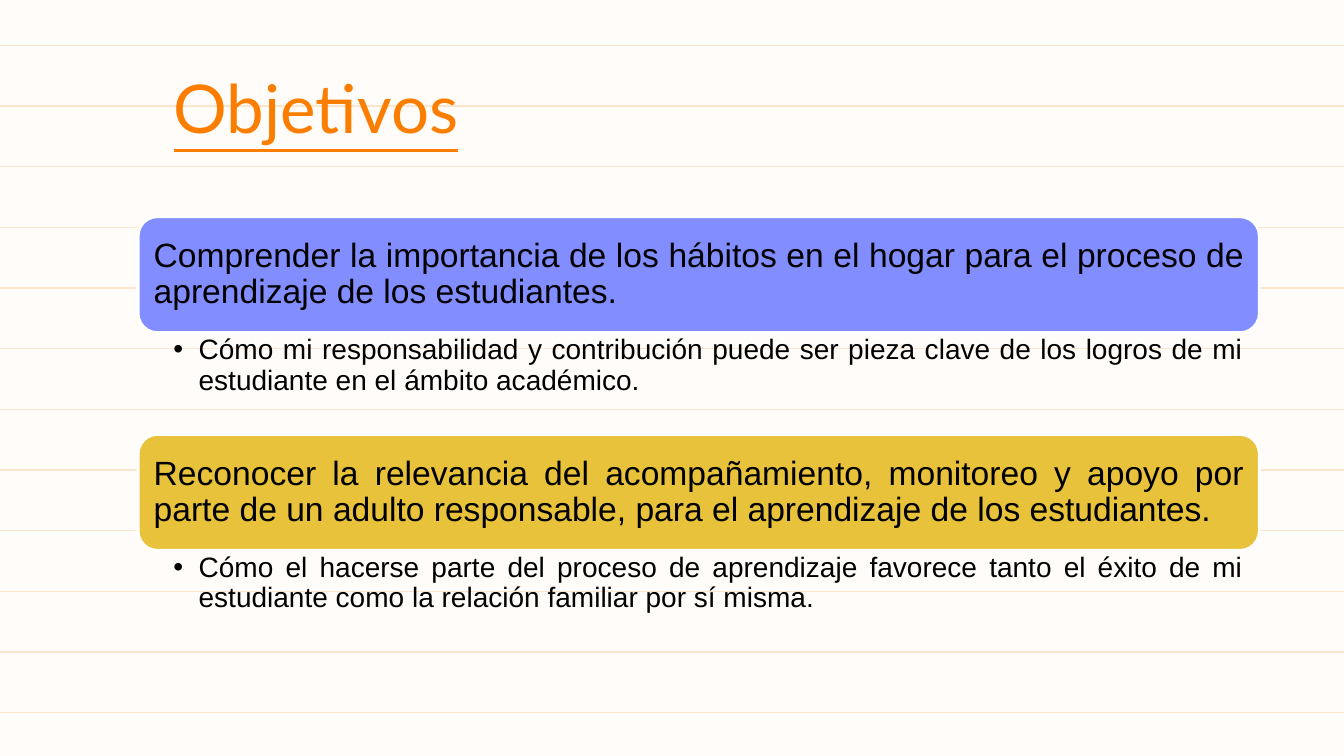
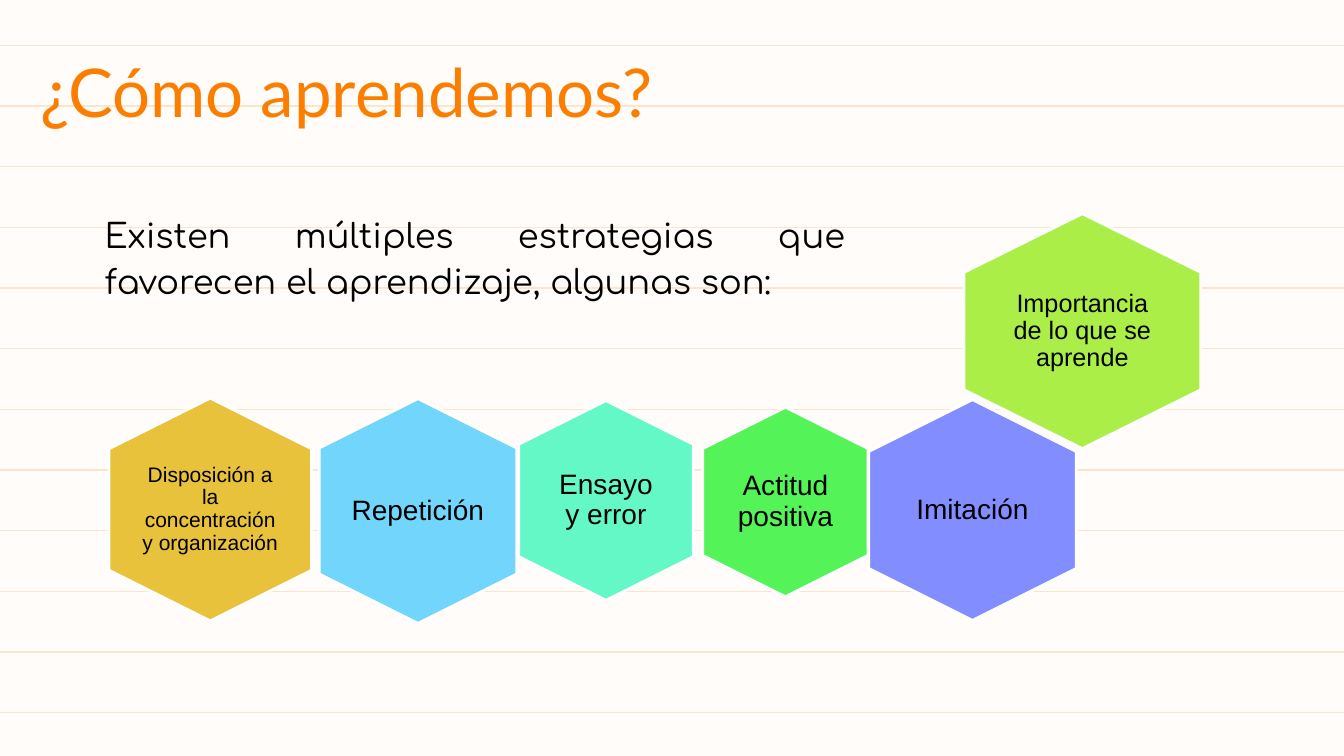
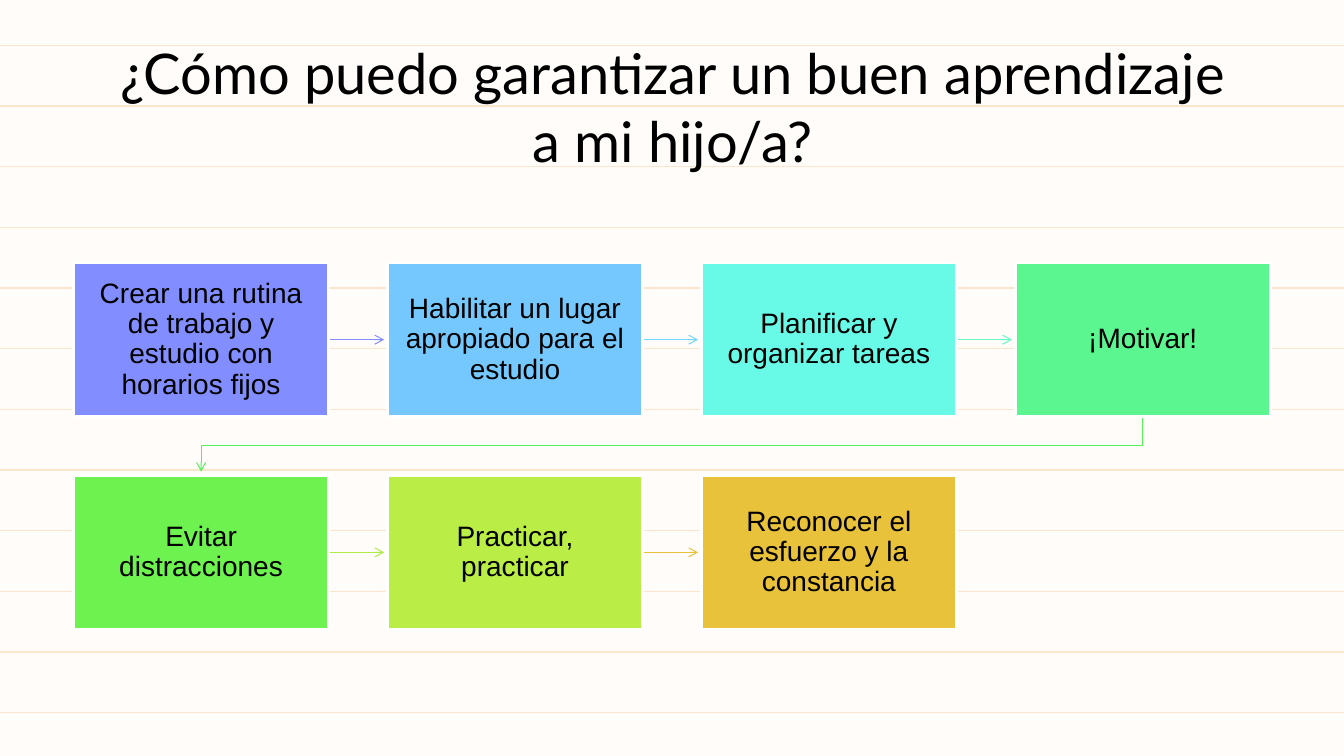
from lxml.etree import SubElement
from pptx import Presentation
from pptx.dml.color import RGBColor
from pptx.enum.shapes import MSO_CONNECTOR as Link, MSO_SHAPE as Form
from pptx.enum.text import MSO_ANCHOR as Anchor, MSO_AUTO_SIZE as Fit, PP_ALIGN as Align
from pptx.oxml.ns import qn
from pptx.util import Inches, Pt

# Shared look
PAPER, RULE, WHITE, BLACK = "FFFCF9", "FCE5CD", "FFFFFF", "000000"
ORANGE, VIOLET, GOLD = "FC7E00", "828EFF", "E8C23A"
SKY, MINT, GREEN, LIME = "72D5FC", "63F8C5", "54F459", "AAEE47"
TITLE = {"name": "Lato", "size": Pt(48), "bold": False}
BODY = {"name": "Arial", "size": Pt(20)}
SIDES = ("margin_left", "margin_top", "margin_right", "margin_bottom")


def rgb(code):
    return RGBColor.from_string(code)


def assign(obj, values):
    for key, value in values.items():
        setattr(obj, key, value)


def write(shape, text, font, align=Align.CENTER, color=BLACK,
          anchor=Anchor.MIDDLE, inset=(0.1,) * 4, space=0.9):
    """Put one formatted paragraph in a shape and return it."""
    frame = shape.text_frame
    assign(frame, {"word_wrap": True, "auto_size": Fit.NONE, "vertical_anchor": anchor})
    assign(frame, {side: Inches(gap) for side, gap in zip(SIDES, inset)})
    para = frame.paragraphs[0]
    assign(para, {"alignment": align, "line_spacing": space})
    run = para.add_run()
    run.text = text
    assign(run.font, font)
    run.font.color.rgb = rgb(color)
    return para


def add_box(slide, form, area, fill):
    box = slide.shapes.add_shape(form, *map(Inches, area))
    box.shadow.inherit = False
    box.fill.solid()
    box.fill.fore_color.rgb = rgb(fill)
    box.line.color.rgb = rgb(WHITE)
    box.line.width = Pt(2)
    return box


def add_text(slide, area, text, font, **opts):
    return write(slide.shapes.add_textbox(*map(Inches, area)), text, font, **opts)


def add_title(slide, area, text, **opts):
    title = slide.shapes.title
    sizes = map(Inches, area)
    assign(title, dict(zip(("left", "top", "width", "height"), sizes)))
    font = {**TITLE, **opts.pop("font", {})}
    write(title, text, font, anchor=Anchor.BOTTOM, space=1.0, **opts)


def style_line(line, color, arrow=False):
    line.line.color.rgb = rgb(color)
    line.line.width = Pt(0.75)
    props = line.element.spPr
    if arrow:
        SubElement(props.find(qn("a:ln")), qn("a:tailEnd"), type="arrow")
    if props.find(qn("a:effectLst")) is None:
        SubElement(props, qn("a:effectLst"))


def add_line(slide, x1, y1, x2, y2, color, arrow=False):
    line = slide.shapes.add_connector(Link.STRAIGHT, *map(Inches, (x1, y1, x2, y2)))
    style_line(line, color, arrow)
    return line


def add_path(slide, points, color):
    first, *rest = [(Inches(x), Inches(y)) for x, y in points]
    maker = slide.shapes.build_freeform(*first)
    maker.add_line_segments(rest, close=False)
    path = maker.convert_to_shape()
    path.fill.background()
    path.shadow.inherit = False
    style_line(path, color, True)
    return path


def rule_page(layout, slide):
    """Give the layout its paper colour and notebook lines."""
    fill = layout.background.fill
    fill.solid()
    fill.fore_color.rgb = rgb(PAPER)
    for row in range(12):
        y = 0.45 + row * 6.62 / 11
        line = add_line(slide, 0, y, 13.37, y, RULE)
        line.element.nvCxnSpPr.cNvPr.set("id", str(100 + row))
        layout.shapes.element.insert(2 + row, line.element)


def show_goals(slide):
    add_title(slide, (-2.18, 0.49, 10.63, 1.07), "Objetivos",
              color=ORANGE, font={"underline": True})
    goals = [
        (VIOLET, "Comprender la importancia de los hábitos en el hogar para el "
         "proceso de aprendizaje de los estudiantes.",
         "Cómo mi responsabilidad y contribución puede ser pieza clave de los "
         "logros de mi estudiante en el ámbito académico."),
        (GOLD, "Reconocer la relevancia del acompañamiento, monitoreo y apoyo por "
         "parte de un adulto responsable, para el aprendizaje de los estudiantes.",
         "Cómo el hacerse parte del proceso de aprendizaje favorece tanto el éxito "
         "de mi estudiante como la relación familiar por sí misma."),
    ]
    for row, (fill, goal, detail) in enumerate(goals):
        y = 2.15 + row * 2.16
        box = add_box(slide, Form.ROUNDED_RECTANGLE, (1.37, y, 11.12, 1.15), fill)
        write(box, goal, {**BODY, "size": Pt(24)}, align=Align.JUSTIFY)
        para = add_text(slide, (1.37, y + 1.15, 11.12, 1.01), detail, BODY,
                        align=Align.JUSTIFY, anchor=Anchor.TOP,
                        inset=(0.35, 0.03, 0.16, 0.03))
        # Hanging bullet
        props = para._p.get_or_add_pPr()
        props.set("marL", str(Inches(0.25)))
        props.set("indent", str(Inches(-0.25)))
        SubElement(props, qn("a:buFont"), typeface="Arial")
        SubElement(props, qn("a:buChar"), char="•")


def show_ways(slide):
    add_title(slide, (0.3, 0.33, 10.63, 1.07), "¿Cómo aprendemos?",
              color=ORANGE, align=Align.JUSTIFY)
    para = add_text(slide, (0.7, 1.97, 7.78, 4.44),
                    "Existen múltiples estrategias que favorecen el aprendizaje, "
                    "algunas son:", {"name": "Comfortaa", "size": Pt(24)},
                    align=Align.JUSTIFY, anchor=Anchor.TOP, space=1.15)
    para._p.get_or_add_pPr().set("marL", str(Inches(0.24)))
    # Frame before the quarter turn, fill, text width, inset, size, words
    ways = [
        ((8.55, 4.03, 2.19, 2.06), VIOLET, 1.39, 0.08, 20, "Imitación"),
        ((3.03, 4.09, 2.23, 1.96), SKY, 1.34, 0, 20, "Repetición"),
        ((5.02, 4.1, 1.98, 1.73), MINT, 1.19, 0.08, 20, "Ensayo y error"),
        ((6.85, 4.16, 1.88, 1.64), GREEN, 1.13, 0, 20, "Actitud positiva"),
        ((9.57, 2.11, 2.33, 2.35), LIME, 1.57, 0.07, 18,
         "Importancia de lo que se aprende"),
        ((0.98, 4.05, 2.21, 2.01), GOLD, 1.37, 0, 15,
         "Disposición a la concentración y organización"),
    ]
    for area, fill, wide, inset, size, words in ways:
        add_box(slide, Form.HEXAGON, area, fill).rotation = 90
        x, y, w, h = area
        add_text(slide, (x + (w - wide) / 2, y + (h - 1.5) / 2, wide, 1.5), words,
                 {**BODY, "size": Pt(size)}, inset=(inset,) * 4)


def show_steps(slide):
    add_title(slide, (1.05, 0.75, 11.24, 1.07),
              "¿Cómo puedo garantizar un buen aprendizaje a mi hijo/a?",
              font={"size": Pt(40)})
    # Fill, colour of the arrow that leaves, words
    steps = [
        (VIOLET, VIOLET, "Crear una rutina de trabajo y estudio con horarios fijos"),
        ("75C8FD", SKY, "Habilitar un lugar apropiado para el estudio"),
        ("68FAE6", MINT, "Planificar y organizar tareas"),
        ("5CF690", GREEN, "¡Motivar!"),
        ("6DF250", LIME, "Evitar distracciones"),
        ("BAED45", GOLD, "Practicar, practicar"),
        (GOLD, None, "Reconocer el esfuerzo y la constancia"),
    ]
    left, top, wide, high = 0.73, 2.61, 2.53, 1.52
    for num, (fill, color, words) in enumerate(steps):
        row, col = divmod(num, 4)
        x, y = left + col * 9.34 / 3, top + row * 2.11
        box = add_box(slide, Form.RECTANGLE, (x, y, wide, high), fill)
        write(box, words, BODY, inset=(0.16,) * 4)
        if not color:
            continue
        if col < 3:
            edge, mid = x + wide, y + high / 2
            arrow = add_line(slide, edge, mid, edge + 0.55, mid, color, True)
            arrow.begin_connect(box, 3)
        else:
            start, end, low = x + wide / 2, left + wide / 2, y + high
            arrow = add_path(slide, [(start, low), (start, low + 0.29),
                                     (end, low + 0.29), (end, low + 0.55)], color)
        # The arrow starts behind the outline of its box
        box.element.addprevious(arrow.element)


def main():
    deck = Presentation()
    deck.slide_width, deck.slide_height = Inches(13.33), Inches(7.5)
    layout = deck.slide_layouts[5]
    parts = (show_goals, show_ways, show_steps)
    slides = [deck.slides.add_slide(layout) for _ in parts]
    rule_page(layout, slides[0])
    for show, slide in zip(parts, slides):
        show(slide)
    deck.save("out.pptx")


if __name__ == "__main__":
    main()
